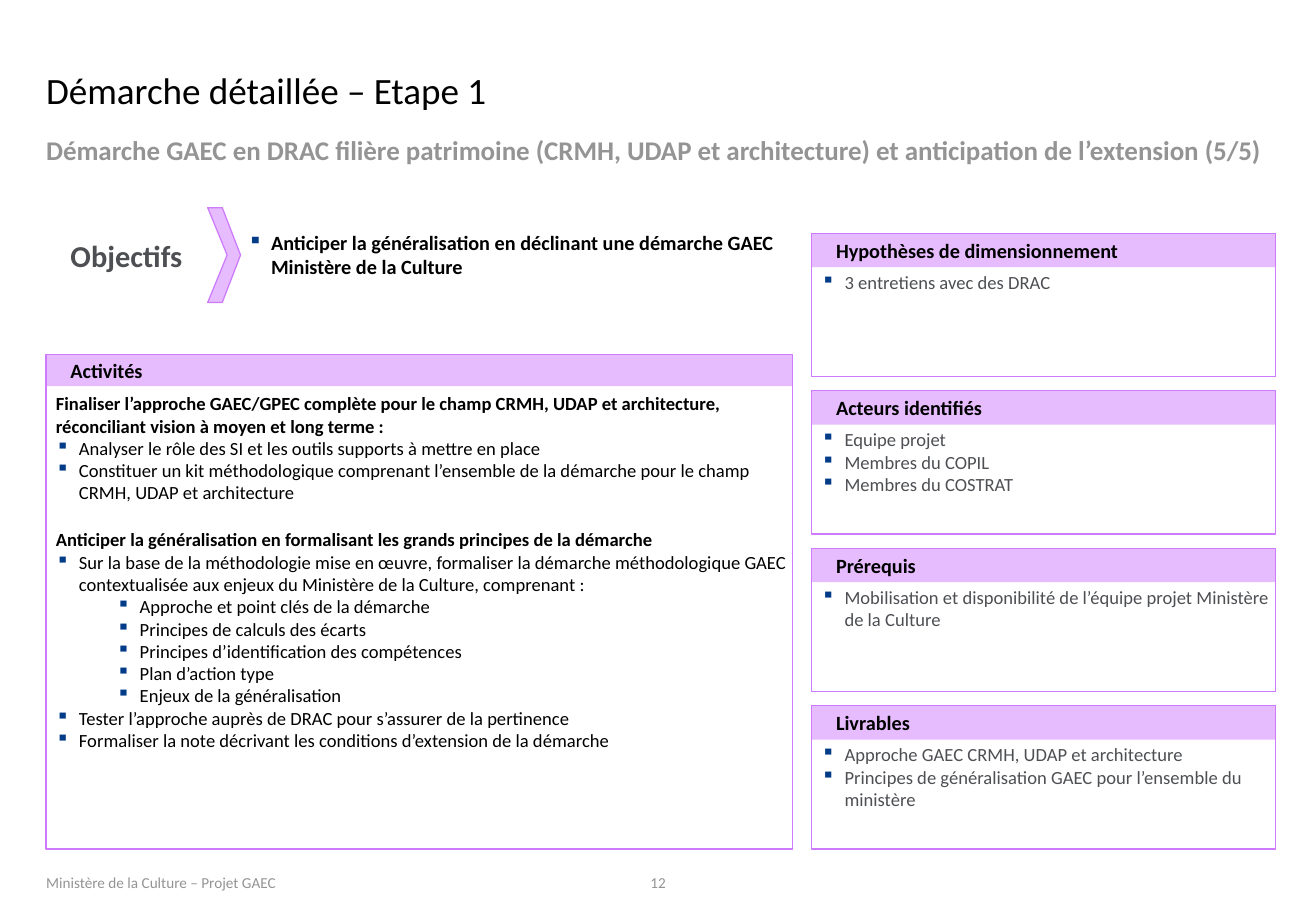
"""Build the slide that details step 1 of the GAEC approach."""
from dataclasses import dataclass

from lxml import etree
from pptx import Presentation
from pptx.dml.color import RGBColor
from pptx.enum.shapes import MSO_SHAPE
from pptx.enum.text import MSO_ANCHOR, MSO_AUTO_SIZE, PP_ALIGN
from pptx.oxml.ns import qn
from pptx.util import Inches, Pt

RECT, PENTAGON = MSO_SHAPE.RECTANGLE, MSO_SHAPE.PENTAGON
TOP, MIDDLE, BOTTOM = MSO_ANCHOR.TOP, MSO_ANCHOR.MIDDLE, MSO_ANCHOR.BOTTOM
LEFT, CENTER = PP_ALIGN.LEFT, PP_ALIGN.CENTER
NO_AUTOFIT = MSO_AUTO_SIZE.NONE
TITLE_ONLY = 5


@dataclass(frozen=True)
class Theme:
    """Fonts, colours and type sizes of the slide."""
    font: str = "Calibri"
    black: str = "000000"
    white: str = "FFFFFF"
    dark: str = "4D4F53"
    grey: str = "949494"
    bullet: str = "023B88"
    lilac: str = "E6BCFE"
    violet: str = "CD7AFD"
    title: int = 22
    subtitle: int = 16
    label: int = 18
    heading: int = 12
    body: int = 11
    footer: int = 9
    outline: float = 0.75


@dataclass(frozen=True)
class Para:
    """A paragraph with its bullet indent, weight and space before."""
    text: str
    indent: float = 0.19
    bold: bool = False
    before: float = 0


class SlideBuilder:
    """Draws the elements of one slide in one theme."""

    def __init__(self, slide, theme):
        """Keep the slide and its theme."""
        self.s, self.theme = slide, theme

    def fill_text(self, sp, paras, size, color, anchor=TOP, align=LEFT, insets=(0, 0, 0, 0)):
        """Fill a shape with formatted paragraphs."""
        tf = sp.text_frame
        left, top, right, bottom = map(Inches, insets)
        frame = {"auto_size": NO_AUTOFIT, "word_wrap": True, "vertical_anchor": anchor,
                 "margin_left": left, "margin_top": top,
                 "margin_right": right, "margin_bottom": bottom}
        for name, value in frame.items():
            setattr(tf, name, value)
        for i, para in enumerate(paras):
            p = tf.add_paragraph() if i else tf.paragraphs[0]
            p.alignment = align
            p.space_before = Pt(para.before)
            if para.indent:
                self.bullet(p, para.indent)
            r = p.add_run()
            r.text = para.text
            style = {"name": self.theme.font, "size": Pt(size), "bold": para.bold}
            for name, value in style.items():
                setattr(r.font, name, value)
            r.font.color.rgb = RGBColor.from_string(color)

    def bullet(self, p, indent):
        """Give a paragraph a coloured square bullet with a hanging indent."""
        pPr = p._p.get_or_add_pPr()
        pPr.set("marL", str(Inches(indent)))
        pPr.set("indent", str(Inches(-0.19)))
        clr = etree.SubElement(pPr, qn("a:buClr"))
        etree.SubElement(clr, qn("a:srgbClr")).set("val", self.theme.bullet)
        etree.SubElement(pPr, qn("a:buChar")).set("char", "▪")

    def title(self, text, box):
        """Place and format the title placeholder."""
        sp = self.s.shapes.title
        sp.left, sp.top, sp.width, sp.height = map(Inches, box)
        self.fill_text(sp, [Para(text, 0)], self.theme.title, self.theme.black, BOTTOM)

    def text(self, para, box, size, color, **layout):
        """Add a text box with one paragraph."""
        sp = self.s.shapes.add_textbox(*map(Inches, box))
        self.fill_text(sp, [para], size, color, **layout)

    def paint(self, sp, fill=None, line=None):
        """Set the fill and outline of a shape."""
        sp.shadow.inherit = False
        if fill:
            sp.fill.solid()
            sp.fill.fore_color.rgb = RGBColor.from_string(fill)
        else:
            sp.fill.background()
        if line:
            sp.line.color.rgb = RGBColor.from_string(line)
            sp.line.width = Pt(self.theme.outline)
        else:
            sp.line.fill.background()

    def shape(self, kind, box, fill=None, line=None):
        """Add a painted preset shape."""
        sp = self.s.shapes.add_shape(kind, *map(Inches, box))
        self.paint(sp, fill, line)
        return sp

    def outline(self, points, fill, line):
        """Add a closed polygon."""
        start, *rest = [(Inches(x), Inches(y)) for x, y in points]
        builder = self.s.shapes.build_freeform(*start)
        builder.add_line_segments(rest, close=True)
        self.paint(builder.convert_to_shape(), fill, line)

    def label(self, text, kind, box, fill, size, color):
        """Add a shape with a bold label."""
        sp = self.shape(kind, box, fill)
        self.fill_text(sp, [Para(text, 0, True)], size, color, MIDDLE,
                       insets=(0.2, 0.04, 0, 0.04))
        return sp

    def panel(self, heading, paras, box, band, color):
        """Add an outlined panel under a heading band."""
        t = self.theme
        self.label(heading, RECT, (*box[:3], band), t.lilac, t.heading, t.black)
        sp = self.shape(RECT, box, line=t.violet)
        self.fill_text(sp, paras, t.body, color, insets=(0.08, 0.31, 0.04, 0.04))


ACTIVITIES = [
    Para("Finaliser l’approche GAEC/GPEC complète pour le champ CRMH, UDAP et architecture, "
         "réconciliant vision à moyen et long terme :", 0, True),
    Para("Analyser le rôle des SI et les outils supports à mettre en place"),
    Para("Constituer un kit méthodologique comprenant l’ensemble de la démarche pour le champ "
         "CRMH, UDAP et architecture"),
    Para("Anticiper la généralisation en formalisant les grands principes de la démarche",
         0, True, 14.6),
    Para("Sur la base de la méthodologie mise en œuvre, formaliser la démarche méthodologique "
         "GAEC contextualisée aux enjeux du Ministère de la Culture, comprenant :"),
    *(Para(text, 0.69) for text in (
        "Approche et point clés de la démarche",
        "Principes de calculs des écarts",
        "Principes d’identification des compétences",
        "Plan d’action type",
        "Enjeux de la généralisation")),
    Para("Tester l’approche auprès de DRAC pour s’assurer de la pertinence"),
    Para("Formaliser la note décrivant les conditions d’extension de la démarche"),
]
SIDE_PANELS = {
    "Hypothèses de dimensionnement": ["3 entretiens avec des DRAC"],
    "Acteurs identifiés": ["Equipe projet", "Membres du COPIL", "Membres du COSTRAT"],
    "Prérequis": ["Mobilisation et disponibilité de l’équipe projet Ministère de la Culture"],
    "Livrables": ["Approche GAEC CRMH, UDAP et architecture",
                  "Principes de généralisation GAEC pour l’ensemble du ministère"],
}
SIDE_TOP, SIDE_LAST = 1.92, 5.81
CHEVRON = [(1.98, 2.1), (1.83, 1.71), (1.71, 1.71), (1.87, 2.1), (1.71, 2.49), (1.83, 2.49)]


def main():
    """Assemble and save the presentation."""
    prs = Presentation()
    prs.slide_width, prs.slide_height = Inches(10.83), Inches(7.5)
    t = Theme()
    b = SlideBuilder(prs.slides.add_slide(prs.slide_layouts[TITLE_ONLY]), t)

    b.title("Démarche détaillée – Etape 1", (0.38, 0.21, 10.07, 0.71))
    b.text(Para("Démarche GAEC en DRAC filière patrimoine (CRMH, UDAP et architecture) "
                "et anticipation de l’extension (5/5)", 0, True),
           (0.38, 1.1, 10.07, 0.37), t.subtitle, t.grey)

    b.text(Para("Anticiper la généralisation en déclinant une démarche GAEC "
                "Ministère de la Culture", bold=True),
           (2, 1.66, 4.51, 0.87), t.heading, t.black, anchor=MIDDLE, insets=(0.04,) * 4)
    goal = b.label("Objectifs", PENTAGON, (0.38, 1.67, 1.62, 0.87), t.white, t.label, t.dark)
    goal.adjustments[0] = 0.11
    b.outline(CHEVRON, t.lilac, t.violet)

    b.panel("Activités", ACTIVITIES, (0.38, 2.92, 6.14, 4.07), 0.26, t.black)
    pitch = (SIDE_LAST - SIDE_TOP) / (len(SIDE_PANELS) - 1)
    for i, (heading, items) in enumerate(SIDE_PANELS.items()):
        box = (6.68, SIDE_TOP + i * pitch, 3.82, 1.18)
        b.panel(heading, [Para(item) for item in items], box, 0.28, t.dark)

    b.text(Para("Ministère de la Culture – Projet GAEC", 0), (0.38, 7.09, 2.48, 0.25),
           t.footer, t.grey, anchor=BOTTOM)
    b.text(Para("12", 0), (5.17, 7.11, 0.49, 0.23), t.footer, t.grey,
           anchor=BOTTOM, align=CENTER)
    prs.save("out.pptx")


if __name__ == "__main__":
    main()
